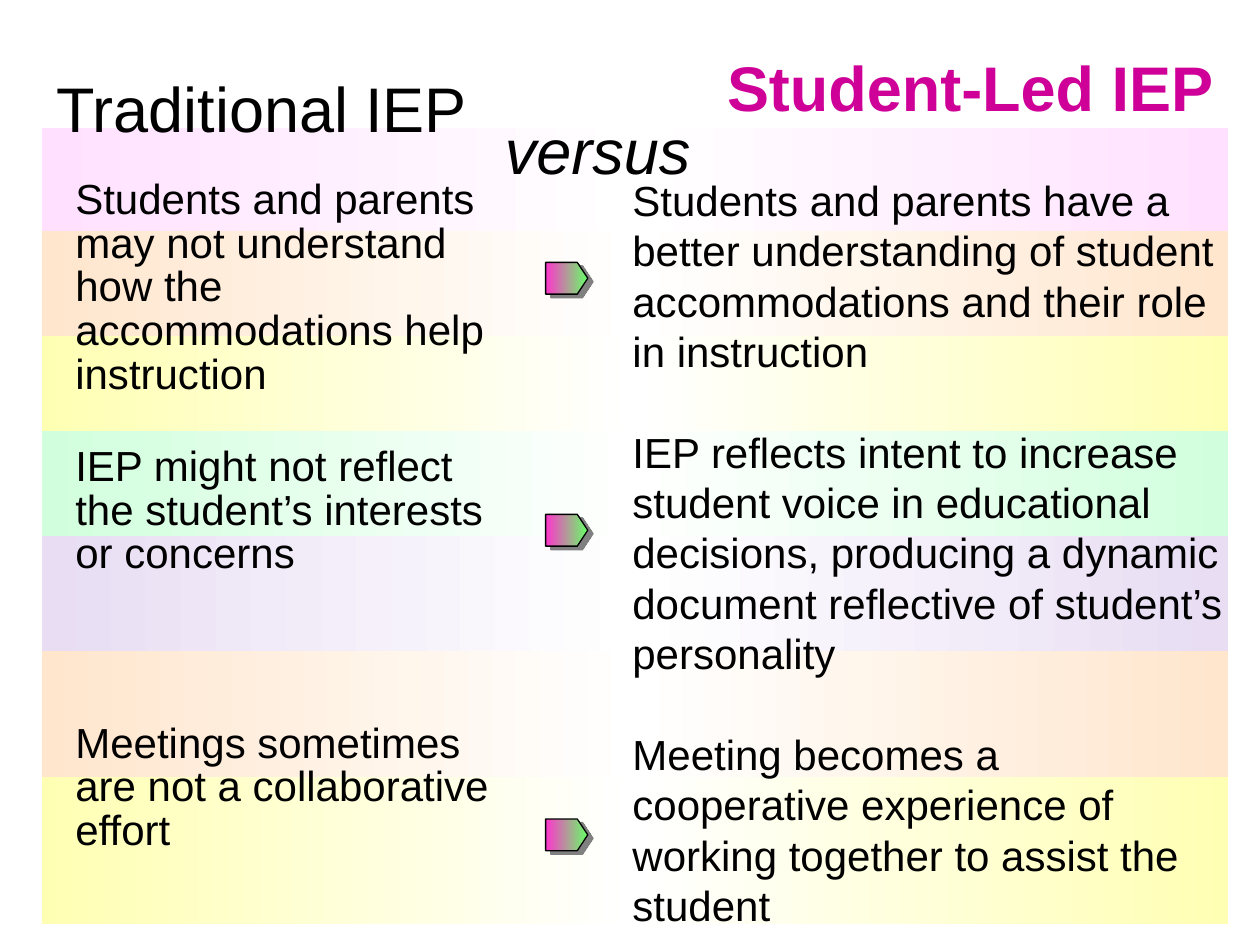
from dataclasses import dataclass

from lxml.etree import SubElement
from pptx import Presentation
from pptx.dml.color import RGBColor
from pptx.enum.shapes import MSO_SHAPE as Preset
from pptx.enum.text import MSO_ANCHOR as Anchor, PP_ALIGN as Align
from pptx.oxml.ns import qn
from pptx.util import Cm, Pt

COLORS = {
    "pink": "FFE1FF",
    "peach": "FFE6CD",
    "yellow": "FFFFB3",
    "mint": "D1FFDD",
    "lilac": "E8DDF3",
    "white": "FFFFFF",
    "black": "000000",
    "magenta": "CE0098",
    "fuchsia": "FF34CC",
    "green": "66FF66",
    "gray": "808080",
}


@dataclass(frozen=True)
class Band:
    top: float
    height: float
    color: str


@dataclass(frozen=True)
class Heading:
    text: str
    left: float
    top: float
    width: float
    color: str = "black"
    bold: bool = False
    italic: bool = False


@dataclass(frozen=True)
class Line:
    text: str
    before: float = 0


BANDS = [
    Band(2.59, 2.12, "pink"),
    Band(4.66, 2.12, "peach"),
    Band(6.77, 2.12, "yellow"),
    Band(8.68, 2.12, "mint"),
    Band(10.8, 2.33, "lilac"),
    Band(13.12, 2.75, "peach"),
    Band(15.66, 2.96, "yellow"),
]

HEADINGS = [
    Heading("Traditional IEP", 0.78, 1.4, 9),
    Heading("Student-Led IEP", 14.06, 0.97, 11, "magenta", bold=True),
    Heading("versus", 10, 2.24, 4.1, italic=True),
]

TRADITIONAL = [
    Line("Students and parents", 4.8),
    Line("may not understand", 4.8),
    Line("how the", 4.8),
    Line("accommodations help", 4.8),
    Line("instruction", 4.8),
    Line("IEP might not reflect", 32.6),
    Line("the student’s interests", 4.8),
    Line("or concerns", 4.8),
    Line("Meetings sometimes", 88.2),
    Line("are not a collaborative", 4.8),
    Line("effort", 4.8),
]

STUDENT_LED = [
    Line("Students and parents have a better understanding of student "
         "accommodations and their role in instruction"),
    Line("IEP reflects intent to increase student voice in educational "
         "decisions, producing a dynamic document reflective of student’s "
         "personality", 28.7),
    Line("Meeting becomes a cooperative experience of working together to "
         "assist the student", 28.7),
]

MARKER_TOPS = [5.29, 10.37, 16.51]


def fill_gradient(shape, colors: list[str]) -> None:
    shape.fill.gradient()
    shape.fill.gradient_angle = 0
    stops = shape.element.spPr.find(qn("a:gradFill")).find(qn("a:gsLst"))
    for stop in list(stops):
        stops.remove(stop)
    for index, color in enumerate(colors):
        position = 100000 * index // (len(colors) - 1)
        stop = SubElement(stops, qn("a:gs"), pos=str(position))
        SubElement(stop, qn("a:srgbClr"), val=COLORS[color])


def add_shadow(shape) -> None:
    effects = shape.element.spPr.find(qn("a:effectLst"))
    shadow = SubElement(effects, qn("a:outerShdw"), blurRad="0",
                        dist=str(Pt(3.6)), dir=str(34 * 60000),
                        algn="ctr", rotWithShape="0")
    SubElement(shadow, qn("a:srgbClr"), val=COLORS["gray"])


def write(para, text: str, *, size: float, color: str = "black",
          bold: bool = False, italic: bool = False, before: float = 0,
          spacing: float = 1.0, align=Align.LEFT) -> None:
    para.alignment = align
    para.line_spacing = spacing
    para.space_before = Pt(before)
    span = para.add_run()
    span.text = text
    span.font.name = "Arial"
    span.font.size = Pt(size)
    span.font.bold = bold
    span.font.italic = italic
    span.font.color.rgb = RGBColor.from_string(COLORS[color])


def draw_band(page, band: Band) -> None:
    shape = page.shapes.add_shape(
        Preset.RECTANGLE, Cm(0.84), Cm(band.top), Cm(23.92), Cm(band.height))
    shape.shadow.inherit = False
    fill_gradient(shape, [band.color, "white", band.color])
    shape.line.fill.background()


def draw_heading(page, heading: Heading) -> None:
    box = page.shapes.add_textbox(
        Cm(heading.left), Cm(heading.top), Cm(heading.width), Cm(1.46))
    frame = box.text_frame
    frame.word_wrap = False
    frame.margin_left = frame.margin_right = 0
    frame.margin_top = frame.margin_bottom = 0
    write(frame.paragraphs[0], heading.text, size=36, color=heading.color,
          bold=heading.bold, italic=heading.italic, align=Align.CENTER)


def draw_column(page, lines: list[Line], left: float, top: float,
                width: float, height: float, spacing: float) -> None:
    box = page.shapes.add_textbox(Cm(left), Cm(top), Cm(width), Cm(height))
    frame = box.text_frame
    frame.word_wrap = True
    frame.vertical_anchor = Anchor.TOP
    for index, line in enumerate(lines):
        para = frame.add_paragraph() if index else frame.paragraphs[0]
        write(para, line.text, size=24, before=line.before, spacing=spacing)


def draw_marker(page, top: float) -> None:
    shape = page.shapes.add_shape(
        Preset.PENTAGON, Cm(11), Cm(top), Cm(0.85), Cm(0.64))
    shape.adjustments[0] = 0.33
    shape.shadow.inherit = False
    fill_gradient(shape, ["fuchsia", "green"])
    shape.line.color.rgb = RGBColor.from_string(COLORS["black"])
    shape.line.width = Pt(0.75)
    add_shadow(shape)


def main() -> None:
    deck = Presentation()
    deck.slide_width, deck.slide_height = Cm(25.4), Cm(19.05)
    page = deck.slides.add_slide(deck.slide_layouts[6])
    for band in BANDS:
        draw_band(page, band)
    draw_column(page, TRADITIONAL, 1.27, 3.63, 9.1, 14.61, spacing=0.7)
    draw_column(page, STUDENT_LED, 12.5, 3.39, 12.5, 15.65, spacing=1.0)
    for heading in HEADINGS:
        draw_heading(page, heading)
    for top in MARKER_TOPS:
        draw_marker(page, top)
    deck.save("out.pptx")


if __name__ == "__main__":
    main()
